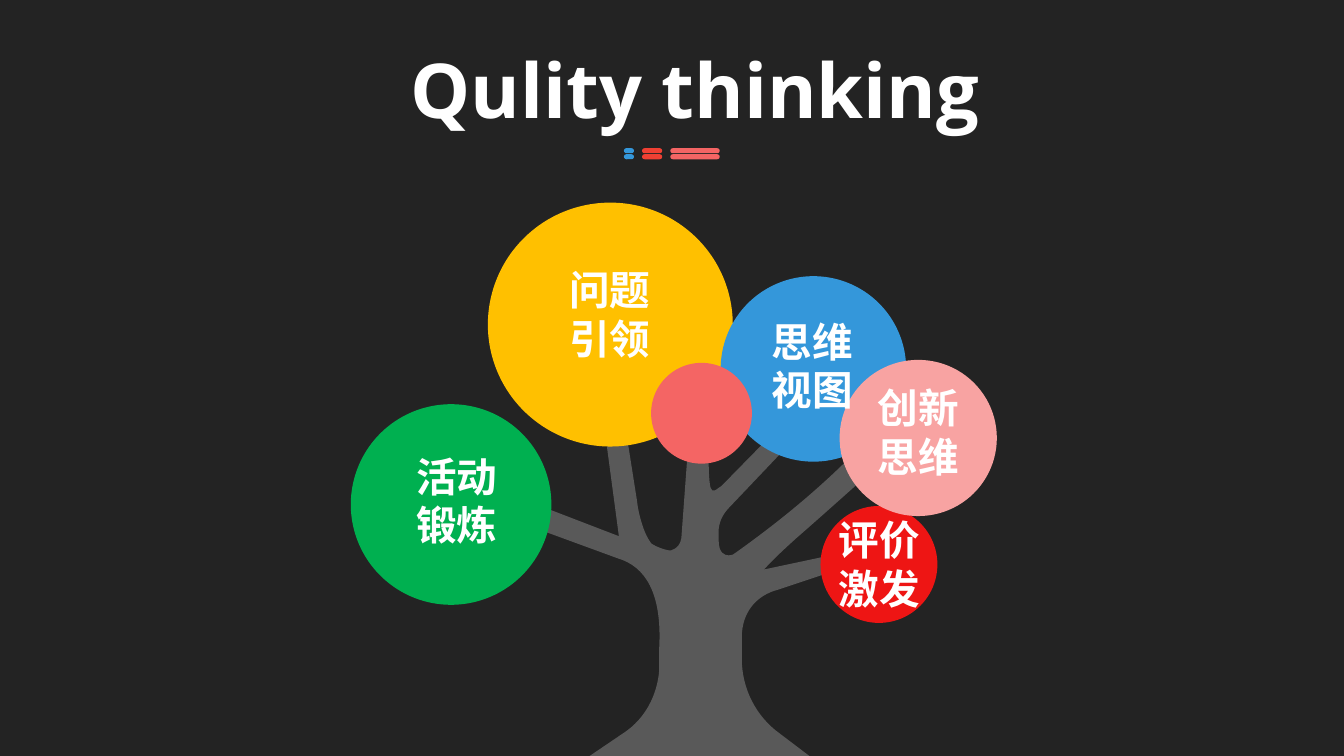
from dataclasses import dataclass

import lxml.etree
import pptx
import pptx.dml.color
import pptx.enum.shapes
import pptx.enum.text
import pptx.oxml.ns
import pptx.shapes.autoshape
import pptx.slide
import pptx.util

RGBColor = pptx.dml.color.RGBColor
Inches = pptx.util.Inches
MSO_SHAPE = pptx.enum.shapes.MSO_SHAPE
PP_ALIGN = pptx.enum.text.PP_ALIGN
qn = pptx.oxml.ns.qn

NIGHT = RGBColor(0x23, 0x23, 0x23)
BARK = RGBColor(0x59, 0x59, 0x59)
WHITE = RGBColor(0xFF, 0xFF, 0xFF)
YELLOW = RGBColor(0xFF, 0xC0, 0x00)
GREEN = RGBColor(0x00, 0xB0, 0x50)
BLUE = RGBColor(0x34, 0x97, 0xDA)
RED = RGBColor(0xEE, 0x15, 0x14)
CORAL = RGBColor(0xF4, 0x65, 0x64)
PINK = RGBColor(0xF8, 0xA3, 0xA2)
ORANGE = RGBColor(0xF0, 0x40, 0x33)

FONT = "Open Sans"


@dataclass(frozen=True)
class Crown:
    left: float
    top: float
    width: float
    height: float
    color: RGBColor


@dataclass(frozen=True)
class Label:
    left: float
    top: float
    lines: tuple[str, ...]
    width: float = 1.01
    height: float = 1.08
    size: float = 29
    align: PP_ALIGN = PP_ALIGN.LEFT


@dataclass(frozen=True)
class Dash:
    left: float
    width: float
    color: RGBColor


TREE_LEFT, TREE_TOP = 5.31, 4.27
TREE_START = (5.85, 7.5)
TREE_STEPS: list[tuple[float, ...]] = [
    (6.19, 7.27),
    (6.4, 7.13, 6.52, 6.9, 6.54, 6.65),
    (6.54, 6.43),
    (6.57, 5.88, 6.4, 5.62, 6.13, 5.54),
    (5.31, 5.24),
    (5.36, 5.02),
    (6.14, 5.32),
    (6, 4.27),
    (6.21, 4.27),
    (6.32, 4.97),
    (6.33, 5.06, 6.35, 5.14, 6.38, 5.23),
    (6.4, 5.29, 6.43, 5.35, 6.46, 5.39),
    (6.51, 5.43, 6.64, 5.47, 6.66, 5.46),
    (6.72, 5.44, 6.75, 5.4, 6.76, 5.34),
    (6.82, 4.52),
    (7.03, 4.51),
    (7.03, 4.51, 7.03, 4.69, 7.04, 4.78),
    (7.05, 4.88, 7.07, 4.89, 7.13, 4.84),
    (7.13, 4.84, 7.15, 4.83, 7.16, 4.82),
    (7.63, 4.34),
    (7.81, 4.43),
    (7.24, 5.03),
    (7.18, 5.09, 7.14, 5.16, 7.13, 5.25),
    (7.13, 5.27, 7.13, 5.3, 7.13, 5.33),
    (7.13, 5.36),
    (7.13, 5.49, 7.19, 5.51, 7.23, 5.51),
    (7.26, 5.51, 7.28, 5.5, 7.29, 5.49),
    (7.67, 5.22, 8.03, 4.93, 8.36, 4.61),
    (8.4, 4.57),
    (8.4, 4.57, 8.52, 4.78, 8.52, 4.79),
    (8.51, 4.8, 8.13, 5.14, 7.9, 5.34),
    (7.79, 5.44, 7.68, 5.54, 7.58, 5.65),
    (8.24, 5.51),
    (8.23, 5.68),
    (7.72, 5.85),
    (7.49, 5.91, 7.36, 6.09, 7.36, 6.32),
    (7.36, 6.54),
    (7.36, 6.83, 7.5, 7.11, 7.74, 7.28),
    (8.03, 7.5),
]

CROWNS = [
    Crown(4.84, 2.01, 2.43, 2.42, YELLOW),
    Crown(3.48, 4.01, 1.99, 1.99, GREEN),
    Crown(7.15, 2.74, 1.84, 1.84, BLUE),
    Crown(8.14, 5.02, 1.16, 1.16, RED),
    Crown(6.46, 3.6, 1, 1, CORAL),
    Crown(8.33, 3.57, 1.56, 1.55, PINK),
]

LABELS = [
    Label(5.55, 2.58, ("问题", "引领")),
    Label(7.56, 3.09, ("思维", "视图")),
    Label(4.03, 4.43, ("活动", "锻炼")),
    Label(8.22, 5.06, ("评价", "激发")),
    Label(8.61, 3.75, ("创新", "思维")),
    Label(3.95, 0.38, ("Qulity thinking",), 5.89, 1.01, 54, PP_ALIGN.CENTER),
]

DASHES = [
    Dash(6.65, 0.49, CORAL),
    Dash(6.37, 0.2, ORANGE),
    Dash(6.19, 0.1, BLUE),
]
UPPER_ROW, LOWER_ROW = 1.47, 1.53
DASH_HEIGHT = 0.05


def paint(shape: pptx.shapes.autoshape.Shape, color: RGBColor) -> None:
    shape.shadow.inherit = False
    shape.fill.solid()
    shape.fill.fore_color.rgb = color
    shape.line.fill.background()


def draw_tree(slide: pptx.slide.Slide) -> None:
    builder = slide.shapes.build_freeform(
        Inches(TREE_START[0]), Inches(TREE_START[1]))
    builder.add_line_segments(
        [(Inches(step[-2]), Inches(step[-1])) for step in TREE_STEPS], close=True)
    tree = builder.convert_to_shape()
    segments = list(tree.element.iter(qn("a:lnTo")))
    for segment, step in zip(segments, TREE_STEPS):
        if len(step) == 6:
            curve = lxml.etree.Element(qn("a:cubicBezTo"))
            for x, y in zip(step[::2], step[1::2]):
                lxml.etree.SubElement(
                    curve, qn("a:pt"),
                    x=str(Inches(x) - Inches(TREE_LEFT)),
                    y=str(Inches(y) - Inches(TREE_TOP)))
            segment.getparent().replace(segment, curve)
    paint(tree, BARK)


def draw_crown(slide: pptx.slide.Slide, crown: Crown) -> None:
    circle = slide.shapes.add_shape(
        MSO_SHAPE.OVAL, Inches(crown.left), Inches(crown.top),
        Inches(crown.width), Inches(crown.height))
    paint(circle, crown.color)


def draw_dashes(slide: pptx.slide.Slide, top: float) -> None:
    for dash in DASHES:
        bar = slide.shapes.add_shape(
            MSO_SHAPE.ROUNDED_RECTANGLE, Inches(dash.left), Inches(top),
            Inches(dash.width), Inches(DASH_HEIGHT))
        bar.adjustments[0] = 0.5
        paint(bar, dash.color)


def draw_label(slide: pptx.slide.Slide, label: Label) -> None:
    frame = slide.shapes.add_textbox(
        Inches(label.left), Inches(label.top),
        Inches(label.width), Inches(label.height)).text_frame
    frame.word_wrap = False
    frame.auto_size = pptx.enum.text.MSO_AUTO_SIZE.SHAPE_TO_FIT_TEXT
    frame.text = "\n".join(label.lines)
    for paragraph in frame.paragraphs:
        paragraph.alignment = label.align
        paragraph.font.name = FONT
        paragraph.font.size = pptx.util.Pt(label.size)
        paragraph.font.bold = True
        paragraph.font.color.rgb = WHITE


def main() -> None:
    deck = pptx.Presentation()
    deck.slide_width, deck.slide_height = Inches(40 / 3), Inches(7.5)
    slide = deck.slides.add_slide(deck.slide_layouts[6])
    slide.background.fill.solid()
    slide.background.fill.fore_color.rgb = NIGHT
    draw_tree(slide)
    for crown in CROWNS:
        draw_crown(slide, crown)
    draw_dashes(slide, UPPER_ROW)
    for label in LABELS:
        draw_label(slide, label)
    draw_dashes(slide, LOWER_ROW)
    deck.save("out.pptx")


if __name__ == "__main__":
    main()
